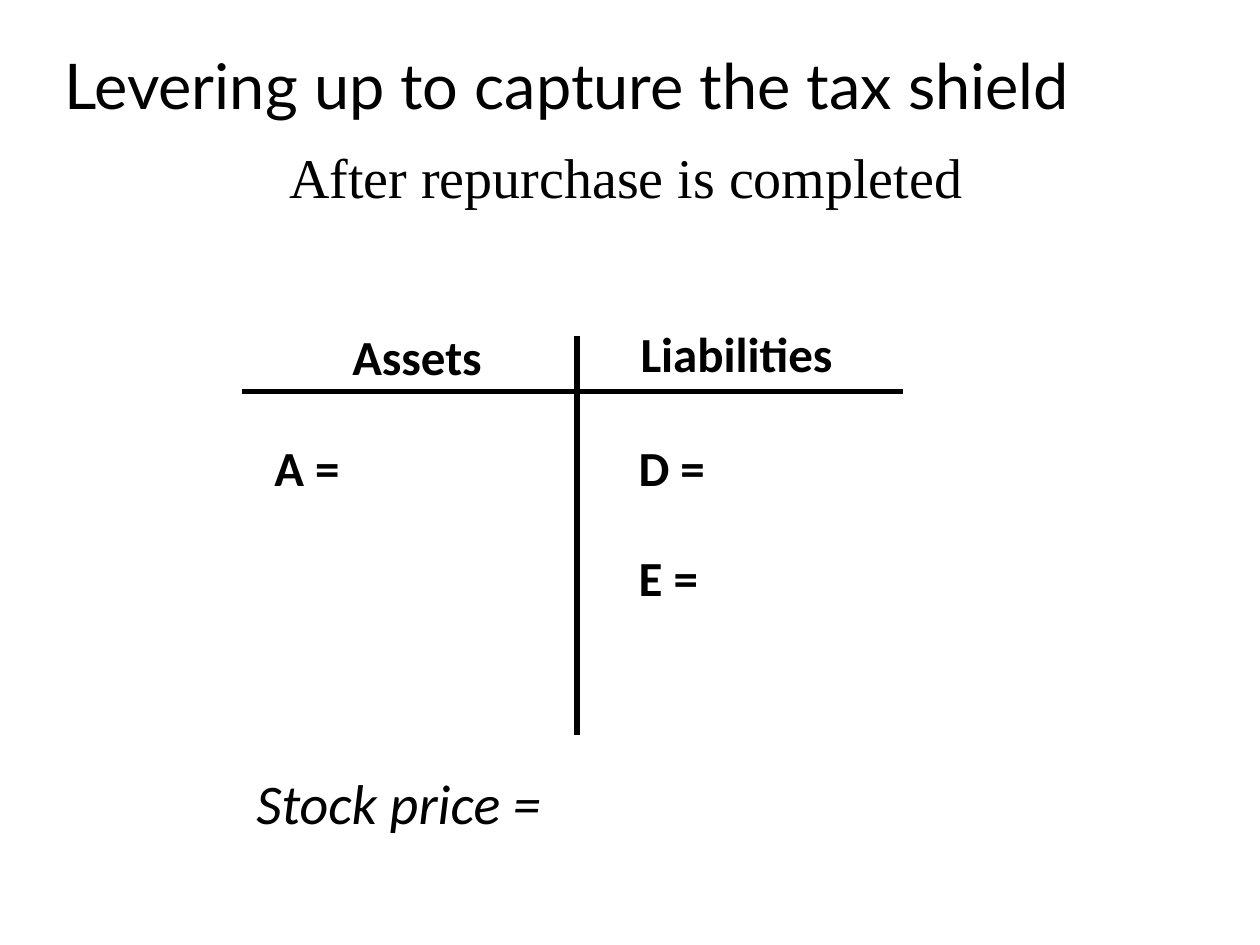
from lxml import etree
from pptx import Presentation
from pptx.dml.color import RGBColor
from pptx.enum.shapes import MSO_CONNECTOR
from pptx.enum.text import MSO_ANCHOR, MSO_AUTO_SIZE, PP_ALIGN
from pptx.oxml.ns import qn
from pptx.util import Inches, Pt

COLORS = {"ink": "000000", "paper": "FFFFFF"}

prs = Presentation()
prs.slide_width, prs.slide_height = Inches(10), Inches(7.5)
s = prs.slides.add_slide(prs.slide_layouts[6])
s.background.fill.solid()
s.background.fill.fore_color.rgb = RGBColor.from_string(COLORS["paper"])


def add_text(text, box, size=28, font="Calibri", bold=False, italic=False,
             align=PP_ALIGN.CENTER, anchor=MSO_ANCHOR.TOP, before=0, grow=False):
    tf = s.shapes.add_textbox(*map(Inches, box)).text_frame
    tf.word_wrap = True
    tf.vertical_anchor = anchor
    if grow:
        tf.auto_size = MSO_AUTO_SIZE.SHAPE_TO_FIT_TEXT
    p = tf.paragraphs[0]
    p.alignment = align
    p.space_before = Pt(before)
    r = p.add_run()
    r.text = text
    r.font.name = font
    r.font.size = Pt(size)
    r.font.bold = bold
    r.font.italic = italic
    r.font.color.rgb = RGBColor.from_string(COLORS["ink"])


add_text("Levering up to capture the tax shield", (0, 0.04, 9, 1.25),
         size=36, font="Lato", anchor=MSO_ANCHOR.MIDDLE)
add_text("After repurchase is completed", (0.47, 1.08, 9, 1.45),
         size=32, font="Times New Roman", before=4)

for ends in [(1.92, 3.11, 7.17, 3.11), (4.58, 2.67, 4.58, 5.83)]:
    line = s.shapes.add_connector(MSO_CONNECTOR.STRAIGHT, *map(Inches, ends))
    line.line.color.rgb = RGBColor.from_string(COLORS["ink"])
    line.line.width = Pt(3)
    etree.SubElement(line._element.spPr, qn("a:effectLst"))

for text, x, y, w, align in [
    ("Assets", 2.52, 2.54, 1.58, PP_ALIGN.CENTER),
    ("Liabilities", 4.97, 2.52, 1.75, PP_ALIGN.CENTER),
    ("D =", 4.97, 3.42, 2.2, PP_ALIGN.LEFT),
    ("E =", 4.97, 4.3, 2.2, PP_ALIGN.LEFT),
    ("A =", 2.08, 3.42, 2.2, PP_ALIGN.LEFT),
]:
    add_text(text, (x, y, w, 0.57), bold=True, align=align, grow=True)

add_text("Stock price = ", (0.36, 6.05, 5.71, 1.45), size=32, italic=True, before=4)

prs.save("out.pptx")
